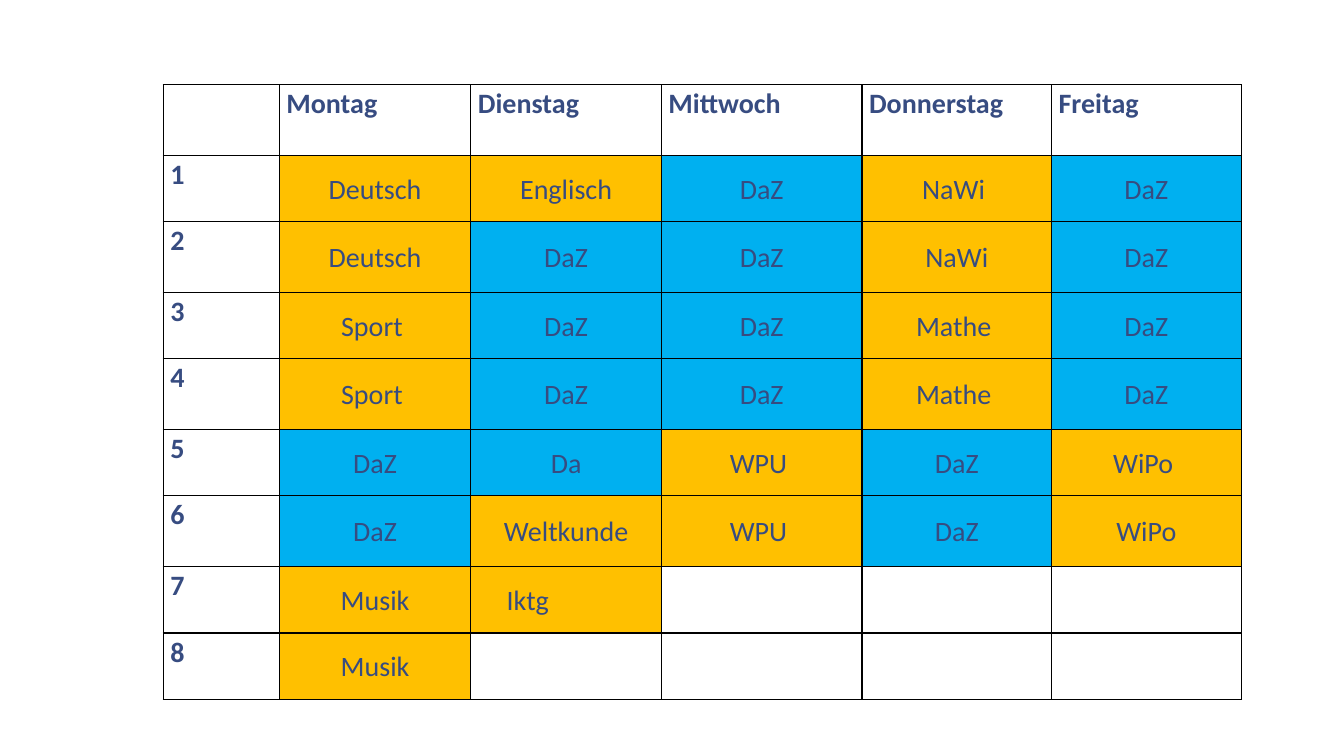
from lxml.etree import SubElement
from pptx import Presentation
from pptx.dml.color import RGBColor
from pptx.enum.text import MSO_ANCHOR, PP_ALIGN
from pptx.oxml.ns import qn
from pptx.util import Inches, Pt

COLORS = {"text": "374C81", "daz": "00B0F0", "class": "FFC000", "line": "000000"}
WIDTHS = [1.15, 1.9, 1.89, 1.99, 1.88, 1.88]
HEIGHTS = [0.7, 0.66, 0.7, 0.66, 0.7, 0.66, 0.7, 0.66, 0.66]
PLAN = [
    ["", "Montag", "Dienstag", "Mittwoch", "Donnerstag", "Freitag"],
    ["1", "Deutsch", "Englisch", "DaZ", "NaWi ", "DaZ"],
    ["2", "Deutsch", "DaZ", "DaZ", "NaWi", "DaZ"],
    ["3", "Sport ", "DaZ", "DaZ", "Mathe ", "DaZ"],
    ["4", "Sport ", "DaZ", "DaZ", "Mathe ", "DaZ"],
    ["5", "DaZ", "Da", "WPU ", "DaZ", "WiPo "],
    ["6", "DaZ", "Weltkunde", "WPU ", "DaZ", "WiPo"],
    ["7", "Musik", "Iktg\t", "", "", ""],
    ["8", "Musik", "", "", "", ""],
]
MARGINS = {"margin_left": 0.07, "margin_right": 0.07, "margin_top": 0, "margin_bottom": 0}
FONT = {"name": "Calibri", "size": Pt(20)}


def add_lines(cell):
    """Draw a thin line on all four sides of a cell."""
    props = cell._tc.get_or_add_tcPr()
    for side in ("lnL", "lnR", "lnT", "lnB"):
        line = SubElement(props, qn(f"a:{side}"), w=str(Pt(1)))
        fill = SubElement(line, qn("a:solidFill"))
        SubElement(fill, qn("a:srgbClr"), val=COLORS["line"])


# Slide
deck = Presentation()
deck.slide_width, deck.slide_height = Inches(13.33), Inches(7.5)
slide = deck.slides.add_slide(deck.slide_layouts[6])

# Table grid
table = slide.shapes.add_table(
    len(PLAN), len(WIDTHS), Inches(1.62), Inches(0.84),
    Inches(sum(WIDTHS)), Inches(sum(HEIGHTS))).table
table.horz_banding = False
for col, width in zip(table.columns, WIDTHS):
    col.width = Inches(width)
for row, height in zip(table.rows, HEIGHTS):
    row.height = Inches(height)

# Days, hours and lessons
for r, names in enumerate(PLAN):
    for c, name in enumerate(names):
        cell = table.cell(r, c)
        add_lines(cell)
        cell.fill.background()
        for key, value in MARGINS.items():
            setattr(cell, key, Inches(value))
        if not name:
            continue
        head = r == 0 or c == 0
        para = cell.text_frame.paragraphs[0]
        if name.endswith("\t"):
            tabs = SubElement(para._p.get_or_add_pPr(), qn("a:tabLst"))
            SubElement(tabs, qn("a:tab"), pos=str(Inches(1.18)), algn="r")
        para.line_spacing = 1.07
        run = para.add_run()
        run.text = name
        for key, value in FONT.items():
            setattr(run.font, key, value)
        run.font.bold = head
        run.font.color.rgb = RGBColor.from_string(COLORS["text"])
        if not head:
            para.alignment = PP_ALIGN.CENTER
            cell.vertical_anchor = MSO_ANCHOR.MIDDLE
            kind = "daz" if name.startswith("Da") else "class"
            cell.fill.solid()
            cell.fill.fore_color.rgb = RGBColor.from_string(COLORS[kind])

deck.save("out.pptx")
